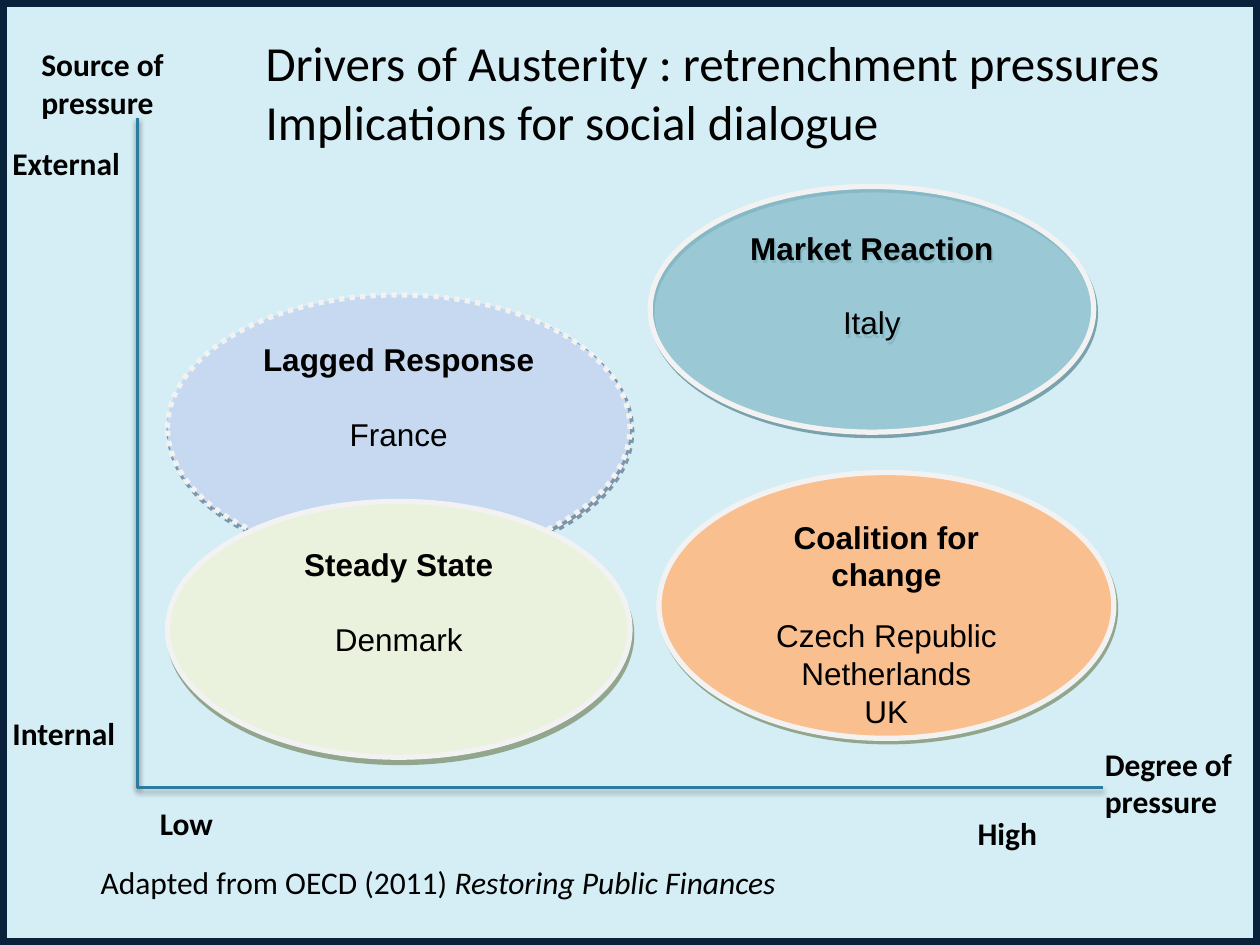
from lxml import etree
from pptx import Presentation
from pptx.dml.color import RGBColor
from pptx.enum import dml, shapes, text
from pptx.oxml import ns
from pptx.util import Inches, Pt

BLACK = RGBColor(0, 0, 0)
SKY = RGBColor(0xD5, 0xED, 0xF4)
NAVY = RGBColor(0x09, 0x21, 0x3B)
AXIS = RGBColor(0x2C, 0x7C, 0x9F)
RIM = RGBColor(0xF2, 0xF2, 0xF2)
TEAL = RGBColor(0x92, 0xCD, 0xDC)
ORANGE = RGBColor(0xFA, 0xBF, 0x8F)
BLUE = RGBColor(0xC6, 0xD9, 0xF1)
GREEN = RGBColor(0xEA, 0xF1, 0xDD)
DARK_TEAL = RGBColor(0x20, 0x58, 0x67)
DARK_GREEN = RGBColor(0x4E, 0x61, 0x28)
DARK_BLUE = RGBColor(0x24, 0x3F, 0x60)

WIDTH, HEIGHT = 10, 7.5
SOLID, DOTTED = None, dml.MSO_LINE.ROUND_DOT

DRIVERS = [
    ("Market Reaction", ["Italy"], (5.16, 1.48, 3.52, 1.95),
     TEAL, 54, SOLID, 21, (DARK_TEAL, 50, 0, 2.2, 63)),
    ("Coalition for change", ["Czech Republic", "Netherlands", "UK"], (5.23, 3.75, 3.61, 2.11),
     ORANGE, 100, SOLID, 13, (DARK_GREEN, 50, 0, 2.2, 63)),
    ("Lagged Response", ["France"], (1.33, 2.34, 3.67, 2.11),
     BLUE, 100, DOTTED, 21, (DARK_BLUE, 50, 0, 2.2, 63)),
    ("Steady State", ["Denmark"], (1.33, 3.98, 3.67, 2.03),
     GREEN, 100, SOLID, 21, (DARK_GREEN, 50, 0, 3.2, 72)),
]

ORIGIN = (1.09, 6.25)
AXIS_ENDS = [(1.09, 0.94), (8.75, 6.25)]
AXIS_SHADOW = (BLACK, 38, 3.1, 1.6, 90)

AXIS_LABELS = [
    ("Source of pressure", (0.23, 0.31, 1.56, 0.71)),
    ("Degree of pressure", (8.67, 5.86, 1.33, 0.71)),
    ("Low", (1.17, 6.33, 1.17, 0.4)),
    ("High", (7.66, 6.41, 1.41, 0.4)),
    ("External", (0, 1.09, 1.09, 0.4)),
    ("Internal", (0, 5.62, 1.02, 0.4)),
]
TITLE = "Drivers of Austerity : retrenchment pressures\nImplications for social dialogue"
TITLE_BOX = (2.01, 0.21, 7.72, 1.04)
CREDIT, REPORT = "Adapted from OECD (2011) ", "Restoring Public Finances"
CREDIT_BOX = (0.7, 6.8, 7.11, 0.4)


def box(sizes):
    return [Inches(n) for n in sizes]


def add_alpha(color, percent):
    etree.SubElement(color, ns.qn("a:alpha"), val=str(percent * 1000))


def add_shadow(s, color, alpha, blur, dist, angle):
    props = s._element.spPr
    for old in props.findall(ns.qn("a:effectLst")):
        props.remove(old)
    effects = etree.SubElement(props, ns.qn("a:effectLst"))
    shadow = etree.SubElement(
        effects, ns.qn("a:outerShdw"), blurRad=str(Pt(blur)), dist=str(Pt(dist)),
        dir=str(angle * 60000), algn="ctr", rotWithShape="0")
    add_alpha(etree.SubElement(shadow, ns.qn("a:srgbClr"), val=str(color)), alpha)


def style(p, font, size, bold=False):
    for r in p.runs:
        r.font.name = font
        r.font.size = Pt(size)
        r.font.bold = bold
        r.font.color.rgb = BLACK


def add_label(slide, words, place, size=18, bold=False):
    tf = slide.shapes.add_textbox(*box(place)).text_frame
    tf.word_wrap = True
    tf.text = words
    for p in tf.paragraphs:
        style(p, "Calibri", size, bold)
    return tf


def add_driver(slide, name, countries, place, fill, alpha, dash, gap, shadow):
    s = slide.shapes.add_shape(shapes.MSO_SHAPE.OVAL, *box(place))
    s.fill.solid()
    s.fill.fore_color.rgb = fill
    if alpha < 100:
        add_alpha(s._element.spPr.find(".//" + ns.qn("a:srgbClr")), alpha)
    s.line.color.rgb = RIM
    s.line.width = Pt(3)
    if dash:
        s.line.dash_style = dash
    add_shadow(s, *shadow)
    tf = s.text_frame
    tf.word_wrap = True
    tf.vertical_anchor = text.MSO_ANCHOR.TOP
    tf.text = "\n".join([name, *countries])
    for i, p in enumerate(tf.paragraphs):
        p.alignment = text.PP_ALIGN.CENTER
        style(p, "Arial", 18, bold=i == 0)
    tf.paragraphs[1].space_before = Pt(gap)


def main():
    prs = Presentation()
    prs.slide_width, prs.slide_height = box((WIDTH, HEIGHT))
    slide = prs.slides.add_slide(prs.slide_layouts[6])
    slide.background.fill.solid()
    slide.background.fill.fore_color.rgb = SKY

    frame = slide.shapes.add_shape(shapes.MSO_SHAPE.RECTANGLE, *box((0, 0, WIDTH, HEIGHT)))
    frame.shadow.inherit = False
    frame.fill.background()
    frame.line.color.rgb = NAVY
    frame.line.width = Pt(8)

    for driver in DRIVERS:
        add_driver(slide, *driver)

    for end in AXIS_ENDS:
        axis = slide.shapes.add_connector(shapes.MSO_CONNECTOR.STRAIGHT, *box(ORIGIN + end))
        axis.line.color.rgb = AXIS
        axis.line.width = Pt(2)
        add_shadow(axis, *AXIS_SHADOW)

    for words, place in AXIS_LABELS:
        add_label(slide, words, place, bold=True)
    add_label(slide, TITLE, TITLE_BOX, size=28)

    p = add_label(slide, CREDIT, CREDIT_BOX).paragraphs[0]
    r = p.add_run()
    r.text = REPORT
    style(p, "Calibri", 18)
    r.font.italic = True

    prs.save("out.pptx")


if __name__ == "__main__":
    main()
